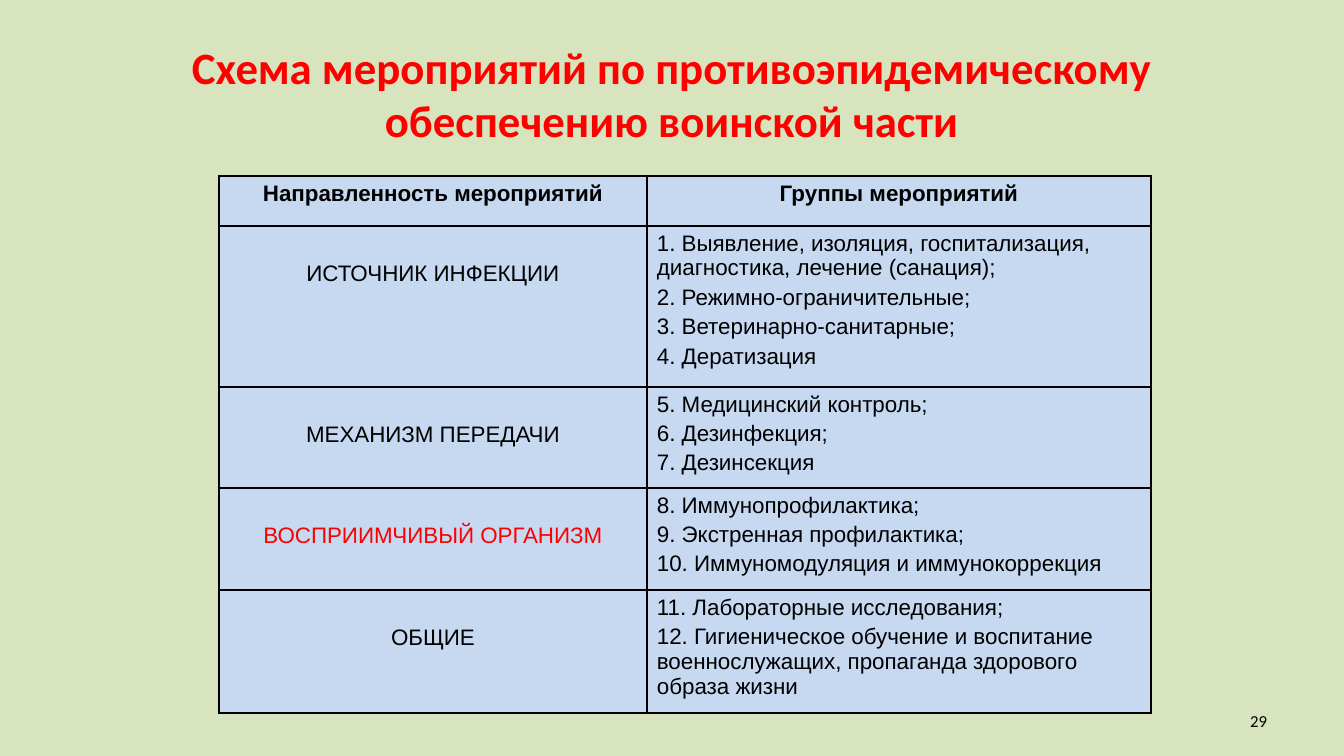
from lxml.etree import SubElement
from pptx import Presentation
from pptx.dml.color import RGBColor
from pptx.enum.text import MSO_ANCHOR as Anchor, MSO_AUTO_SIZE as AutoSize, PP_ALIGN as Align
from pptx.oxml.ns import qn
from pptx.util import Inches, Pt

EMU_PER_PX = Inches(1) / 100.8
BLACK = RGBColor(0x00, 0x00, 0x00)
RED = RGBColor(0xFF, 0x00, 0x00)
PALE_GREEN = RGBColor(0xD7, 0xE4, 0xBD)
PALE_BLUE = RGBColor(0xC6, 0xD9, 0xF1)
THIN, THICK = 1, 2.25

COLUMN_WIDTHS = [428, 504]
ROW_HEIGHTS = [50, 161, 101, 102, 123]
HEADERS = ["Направленность мероприятий", "Группы мероприятий"]
DIRECTIONS = [
    ("ИСТОЧНИК ИНФЕКЦИИ", BLACK, [
        "1. Выявление, изоляция, госпитализация, диагностика, лечение (санация);",
        "2. Режимно-ограничительные;",
        "3. Ветеринарно-санитарные;",
        "4. Дератизация",
    ]),
    ("МЕХАНИЗМ ПЕРЕДАЧИ", BLACK, [
        "5. Медицинский контроль;",
        "6. Дезинфекция;",
        "7. Дезинсекция",
    ]),
    ("ВОСПРИИМЧИВЫЙ ОРГАНИЗМ", RED, [
        "8. Иммунопрофилактика;",
        "9. Экстренная профилактика;",
        "10. Иммуномодуляция и иммунокоррекция",
    ]),
    ("ОБЩИЕ", BLACK, [
        "11. Лабораторные исследования;",
        "12. Гигиеническое обучение и воспитание военнослужащих, "
        "пропаганда здорового образа жизни",
    ]),
]


def px(length):
    return round(length * EMU_PER_PX)


class SlideBuilder:
    """Holds the fonts and sizes of the deck and the slide being built."""
    heading_font, table_font = "Calibri", "Arial"
    title_size, table_size, number_size = 32, 16, 12

    def __init__(self, presentation, background):
        self.slide = presentation.slides.add_slide(presentation.slide_layouts[5])
        fill = self.slide.background.fill
        fill.solid()
        fill.fore_color.rgb = background

    def set_text(self, text_frame, text, font, size, color=BLACK, bold=False,
                 align=Align.LEFT, space_before=0):
        text_frame.word_wrap = True
        text_frame.text = text
        for paragraph in text_frame.paragraphs:
            paragraph.alignment = align
            paragraph.space_before = Pt(space_before)
            for run in paragraph.runs:
                run.font.name = font
                run.font.size = Pt(size)
                run.font.bold = bold
                run.font.color.rgb = color

    def title(self, text, left, top, width, height):
        shape = self.slide.shapes.title
        shape.left, shape.top = px(left), px(top)
        shape.width, shape.height = px(width), px(height)
        shape.text_frame.auto_size = AutoSize.NONE
        shape.text_frame.vertical_anchor = Anchor.MIDDLE
        self.set_text(shape.text_frame, text, self.heading_font, self.title_size,
                      RED, True, Align.CENTER)

    def page_number(self, text, left, top, width, height):
        shape = self.slide.shapes.add_textbox(px(left), px(top), px(width), px(height))
        shape.text_frame.vertical_anchor = Anchor.MIDDLE
        self.set_text(shape.text_frame, text, self.heading_font, self.number_size,
                      align=Align.RIGHT)

    def table(self, left, top, column_widths, row_heights):
        frame = self.slide.shapes.add_table(
            len(row_heights), len(column_widths), px(left), px(top),
            px(sum(column_widths)), px(sum(row_heights)))
        table = frame.table
        table.first_row = table.horz_banding = False
        for column, width in zip(table.columns, column_widths):
            column.width = px(width)
        for row, height in zip(table.rows, row_heights):
            row.height = px(height)
        last_row, last_column = len(row_heights) - 1, len(column_widths) - 1
        for r in range(last_row + 1):
            for c in range(last_column + 1):
                outer = {"lnL": c == 0, "lnR": c == last_column,
                         "lnT": r == 0, "lnB": r == last_row}
                self.borders(table.cell(r, c), outer)
        return table

    def borders(self, cell, outer):
        """Draw thick lines on outer edges, thin lines elsewhere."""
        properties = cell._tc.get_or_add_tcPr()
        for edge, is_outer in outer.items():
            width = Pt(THICK if is_outer else THIN)
            line = SubElement(properties, qn("a:" + edge), w=str(width))
            fill = SubElement(line, qn("a:solidFill"))
            SubElement(fill, qn("a:srgbClr"), val=str(BLACK))

    def cell(self, cell, text, color=BLACK, bold=False, align=Align.LEFT, margin_top=5):
        cell.fill.solid()
        cell.fill.fore_color.rgb = PALE_BLUE
        cell.margin_left = cell.margin_right = px(10)
        cell.margin_top, cell.margin_bottom = px(margin_top), px(5)
        self.set_text(cell.text_frame, text, self.table_font, self.table_size,
                      color, bold, align, space_before=3.2)


def main():
    presentation = Presentation()
    presentation.slide_width, presentation.slide_height = px(1344), px(756)
    builder = SlideBuilder(presentation, PALE_GREEN)
    builder.title("Схема мероприятий по противоэпидемическому обеспечению воинской части",
                  67, 30, 1210, 126)

    table = builder.table(219, 176, COLUMN_WIDTHS, ROW_HEIGHTS)
    for column, header in enumerate(HEADERS):
        builder.cell(table.cell(0, column), header, bold=True, align=Align.CENTER)
    for row, (direction, color, measures) in enumerate(DIRECTIONS, start=1):
        builder.cell(table.cell(row, 0), direction, color, align=Align.CENTER, margin_top=35)
        builder.cell(table.cell(row, 1), "\n".join(measures))

    builder.page_number("29", 964, 701, 313, 40)
    presentation.save("out.pptx")


if __name__ == "__main__":
    main()
